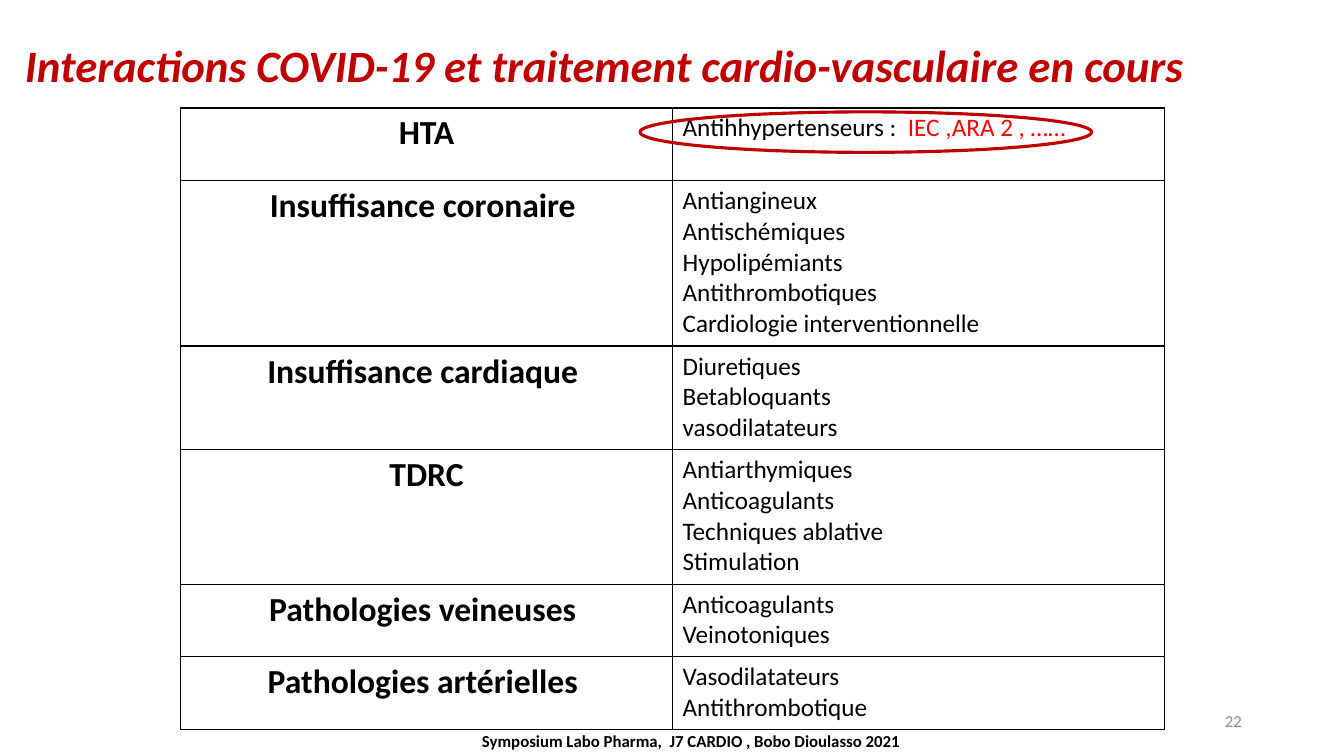
from dataclasses import dataclass

from lxml.etree import SubElement
from pptx import Presentation
from pptx.dml.color import RGBColor
from pptx.enum.shapes import MSO_SHAPE as Preset
from pptx.enum.text import MSO_ANCHOR as Anchor, PP_ALIGN as Align
from pptx.oxml.ns import qn
from pptx.slide import Slide
from pptx.table import _Cell as Cell
from pptx.util import Cm, Pt

FONT = "Calibri"
BLACK = RGBColor(0x00, 0x00, 0x00)
DARK_RED = RGBColor(0xC0, 0x00, 0x00)
RED = RGBColor(0xFF, 0x00, 0x00)
GREY = RGBColor(0x8C, 0x8C, 0x8C)

TABLE_LEFT, TABLE_TOP, COLUMN_WIDTH = 4.55, 2.72, 12.4
LINE_HEIGHT, ROW_PADDING, MIN_LINES = 0.78, 0.27, 2


@dataclass(frozen=True)
class Label:
    text: str
    box: tuple[float, float, float, float]
    size: int
    color: RGBColor
    align: Align = Align.LEFT
    bold: bool = False
    italic: bool = False
    line_spacing: float = 1.0


@dataclass(frozen=True)
class Disease:
    name: str
    treatments: tuple[str, ...]
    highlight: str = ""

    @property
    def height(self) -> float:
        lines = max(MIN_LINES, len(self.treatments))
        return LINE_HEIGHT * lines + ROW_PADDING


LABELS = (
    Label("Interactions COVID-19 et traitement cardio-vasculaire en cours",
          (0.38, 0, 31.47, 3.43), 32, DARK_RED, bold=True, italic=True, line_spacing=0.9),
    Label("22", (23.93, 17.65, 7.62, 1.02), 12, GREY, Align.RIGHT),
    Label("Symposium Labo Pharma,  J7 CARDIO , Bobo Dioulasso 2021",
          (11.07, 18.16, 12.7, 1.02), 12, BLACK, Align.CENTER, bold=True),
)

DISEASES = (
    Disease("HTA", ("Antihhypertenseurs :  ",), "IEC ,ARA 2 , ……"),
    Disease("Insuffisance coronaire ",
            ("Antiangineux", "Antischémiques", "Hypolipémiants",
             "Antithrombotiques", "Cardiologie interventionnelle")),
    Disease("Insuffisance cardiaque ", ("Diuretiques", "Betabloquants", "vasodilatateurs")),
    Disease("TDRC",
            ("Antiarthymiques", "Anticoagulants", "Techniques ablative", "Stimulation")),
    Disease("Pathologies veineuses ", ("Anticoagulants", "Veinotoniques")),
    Disease("Pathologies artérielles ", ("Vasodilatateurs", "Antithrombotique")),
)


def add_label(slide: Slide, label: Label) -> None:
    frame = slide.shapes.add_textbox(*map(Cm, label.box)).text_frame
    frame.word_wrap = True
    frame.vertical_anchor = Anchor.MIDDLE
    paragraph = frame.paragraphs[0]
    paragraph.text = label.text
    paragraph.alignment = label.align
    paragraph.line_spacing = label.line_spacing
    font = paragraph.font
    font.name, font.size = FONT, Pt(label.size)
    font.bold, font.italic = label.bold, label.italic
    font.color.rgb = label.color


def style_cell(cell: Cell) -> None:
    properties = cell._tc.get_or_add_tcPr()
    for side in ("lnL", "lnR", "lnT", "lnB"):
        line = SubElement(properties, qn(f"a:{side}"), w=str(Pt(1)))
        fill = SubElement(line, qn("a:solidFill"))
        SubElement(fill, qn("a:srgbClr"), val=str(BLACK))
    cell.fill.background()


def fill_cell(cell: Cell, lines: tuple[str, ...], size: int, bold: bool, align: Align) -> None:
    style_cell(cell)
    cell.text = "\n".join(lines)
    for paragraph in cell.text_frame.paragraphs:
        paragraph.alignment = align
        font = paragraph.font
        font.name, font.size, font.bold = FONT, Pt(size), bold
        font.color.rgb = BLACK


def add_disease_table(slide: Slide) -> None:
    total_height = sum(disease.height for disease in DISEASES)
    table = slide.shapes.add_table(
        len(DISEASES), 2, Cm(TABLE_LEFT), Cm(TABLE_TOP),
        Cm(2 * COLUMN_WIDTH), Cm(total_height)).table
    table.first_row = table.horz_banding = False
    for index, disease in enumerate(DISEASES):
        table.rows[index].height = Cm(disease.height)
        fill_cell(table.cell(index, 0), (disease.name,), 24, True, Align.CENTER)
        treatment_cell = table.cell(index, 1)
        fill_cell(treatment_cell, disease.treatments, 18, False, Align.LEFT)
        if disease.highlight:
            run = treatment_cell.text_frame.paragraphs[-1].add_run()
            run.text = disease.highlight
            run.font.color.rgb = RED


def add_highlight_ring(slide: Slide) -> None:
    ring = slide.shapes.add_shape(Preset.OVAL, Cm(16.13), Cm(2.82), Cm(11.38), Cm(1.02))
    ring.shadow.inherit = False
    ring.fill.background()
    ring.line.color.rgb = DARK_RED
    ring.line.width = Pt(2.25)


def main() -> None:
    presentation = Presentation()
    presentation.slide_width, presentation.slide_height = Cm(33.87), Cm(19.05)
    slide = presentation.slides.add_slide(presentation.slide_layouts[6])

    # Title, page number and footer
    for label in LABELS:
        add_label(slide, label)

    # Diseases with their treatments
    add_disease_table(slide)

    # Ring around the antihypertensive drugs
    add_highlight_ring(slide)

    presentation.save("out.pptx")


if __name__ == "__main__":
    main()
